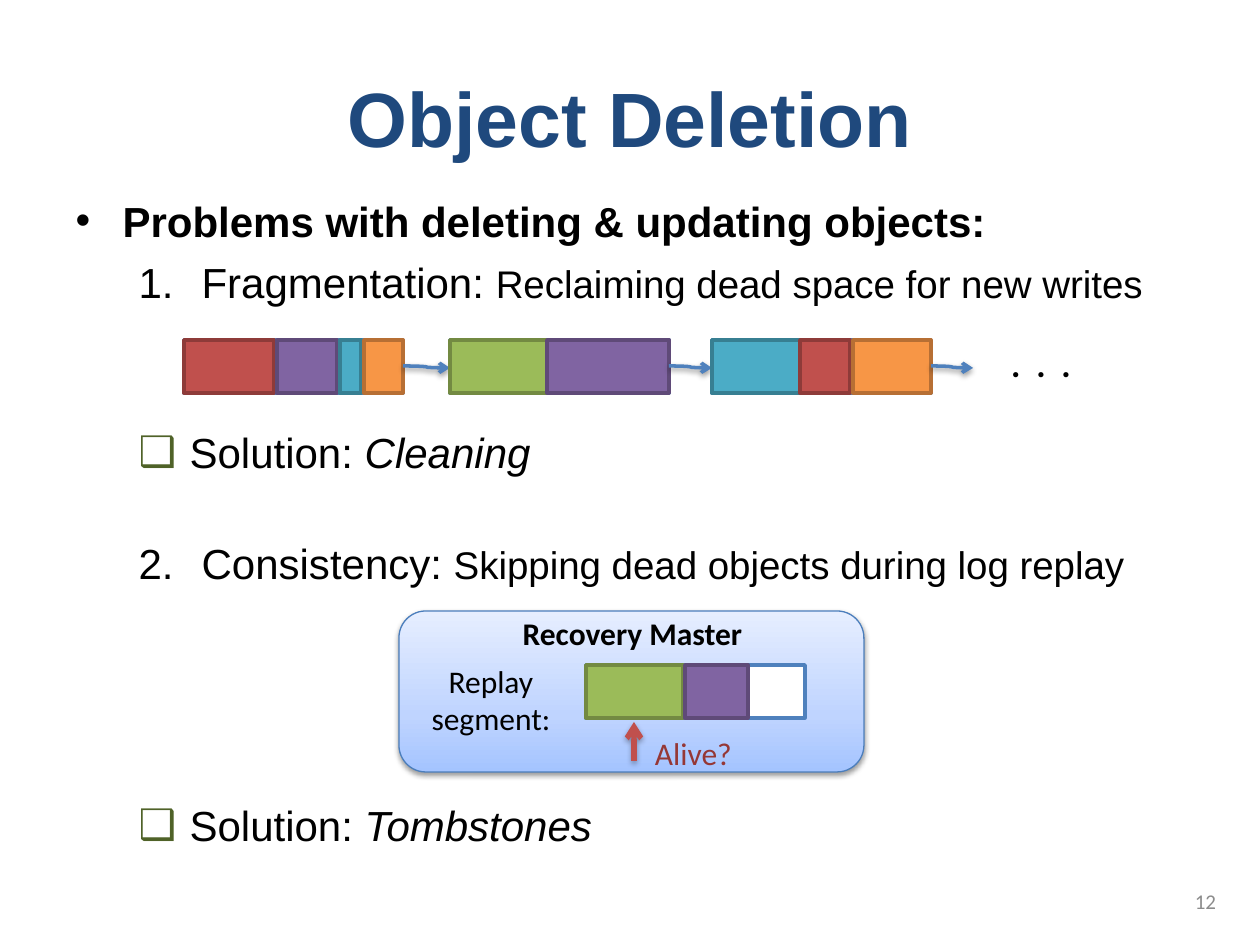
from dataclasses import dataclass

from lxml.etree import SubElement as Sub
from pptx import Presentation
from pptx.dml.color import RGBColor
from pptx.enum.shapes import MSO_CONNECTOR as Conn, MSO_SHAPE as Kind
from pptx.enum.text import MSO_ANCHOR as Anchor, MSO_AUTO_SIZE as Fit, PP_ALIGN as Align
from pptx.oxml.ns import qn
from pptx.util import Pt

SCALE = 914400 / 126
BLUE, RED, BLACK = "4F81BD", "C0504D", "000000"
EDGES = {"FFFFFF": BLUE, RED: "8E3B39", "8064A2": "5F4A78",
         "4BACC6": "377F92", "9BBB59": "738A42", "F79646": "B76F34"}


@dataclass
class Block:
    x: int
    w: int
    hue: str


@dataclass
class Item:
    head: str
    tail: str
    size: int
    slant: bool
    gap: float
    left: int
    hang: int
    start: int = 0


@dataclass
class Label:
    text: str
    x: int
    y: int
    w: int
    h: int
    size: int
    hue: str
    align: Align
    bold: bool = False
    wrap: bool = False
    inset: int = 6


LOG = [
    [Block(184, 90, RED), Block(277, 60, "8064A2"),
     Block(340, 21, "4BACC6"), Block(364, 39, "F79646")],
    [Block(450, 97, "9BBB59"), Block(547, 122, "8064A2")],
    [Block(712, 88, "4BACC6"), Block(800, 50, RED), Block(853, 78, "F79646")],
]
REPLAY = [Block(586, 97, "9BBB59"), Block(685, 63, "8064A2")]
ENDS = [450, 712, 973]
ITEMS = [
    Item("Fragmentation: ", "Reclaiming dead space for new writes", 22, False, 6, 126, 63, 1),
    Item("Solution: ", "Cleaning", 24, True, 68.4, 114, 51),
    Item("Consistency: ", "Skipping dead objects during log replay", 22, False, 34.7, 126, 63, 2),
    Item("Solution: ", "Tombstones", 24, True, 121, 114, 51),
]
LABELS = [
    Label("12", 935, 876, 293, 50, 12, "8C8C8C", Align.RIGHT, wrap=True),
    Label(".  .  .", 997, 336, 86, 55, 20, BLACK, Align.RIGHT, bold=True),
    Label("Recovery Master", 465, 614, 335, 38, 18, BLACK, Align.CENTER, True, True, 0),
    Label("Alive?", 643, 728, 103, 50, 18, "953735", Align.LEFT),
    Label("Replay\vsegment:", 418, 655, 146, 89, 18, BLACK, Align.CENTER),
]


def px(n: float) -> int:
    return round(n * SCALE)


def rgb(code: str) -> RGBColor:
    return RGBColor.from_string(code)


def style(para, face: str, size: int, hue: str, bold: bool = False) -> None:
    font = para.font
    font.name, font.size, font.bold = face, Pt(size), bold
    font.color.rgb = rgb(hue)


def place(shape, x: int, y: int, w: int, h: int) -> None:
    shape.left, shape.top, shape.width, shape.height = map(px, (x, y, w, h))


def tint(host, code: str):
    return Sub(host, qn("a:srgbClr"), val=code)


def shade(effect, alpha: int) -> None:
    cast = Sub(effect, qn("a:outerShdw"), blurRad="40000", dist="20000",
               dir="5400000", rotWithShape="0")
    Sub(tint(cast, BLACK), qn("a:alpha"), val=str(alpha * 1000))


def box(slide, kind: Kind, x: int, y: int, w: int, h: int, hue: str, edge: str, width: float):
    shape = slide.shapes.add_shape(kind, px(x), px(y), px(w), px(h))
    shape.shadow.inherit = False
    shape.fill.solid()
    shape.fill.fore_color.rgb = rgb(hue)
    shape.line.color.rgb = rgb(edge)
    shape.line.width = Pt(width)
    return shape


def strip(slide, frame: Block, blocks: list[Block], y: int) -> None:
    for part in [frame, *blocks]:
        box(slide, Kind.RECTANGLE, part.x, y, part.w, 53, part.hue, EDGES[part.hue], 2)


def arrow(slide, kind: Conn, x1: int, y1: int, x2: int, y2: int,
          hue: str, width: float, alpha: int) -> None:
    link = slide.shapes.add_connector(kind, px(x1), px(y1), px(x2), px(y2))
    link.line.color.rgb = rgb(hue)
    link.line.width = Pt(width)
    Sub(link.line._get_or_add_ln(), qn("a:tailEnd"), type="arrow")
    shade(Sub(link._element.spPr, qn("a:effectLst")), alpha)


def card(slide) -> None:
    shape = box(slide, Kind.ROUNDED_RECTANGLE, 399, 611, 465, 161, "BFD4FF", "4B7EBC", 0.75)
    props = shape._element.spPr
    shade(props.find(qn("a:effectLst")), 38)
    old = props.find(qn("a:solidFill"))
    grad = props.makeelement(qn("a:gradFill"), {"rotWithShape": "1"})
    props.replace(old, grad)
    stops = Sub(grad, qn("a:gsLst"))
    for pos, hue in ((0, "A4C4FF"), (35, "BFD4FF"), (100, "E6EEFF")):
        tint(Sub(stops, qn("a:gs"), pos=str(pos * 1000)), hue)
    Sub(grad, qn("a:lin"), ang="16200000", scaled="0")


def write(slide, label: Label) -> None:
    shape = slide.shapes.add_textbox(*map(px, (label.x, label.y, label.w, label.h)))
    frame = shape.text_frame
    frame.word_wrap = label.wrap
    frame.margin_top = frame.margin_bottom = px(label.inset)
    frame.margin_left = frame.margin_right = px(2 * label.inset)
    frame.vertical_anchor = Anchor.MIDDLE
    para = frame.paragraphs[0]
    para.text = label.text
    para.alignment = label.align
    style(para, "Calibri", label.size, label.hue, label.bold)


def indent(para, left: int, hang: int):
    props = para._p.get_or_add_pPr()
    props.set("marL", str(px(left)))
    props.set("indent", str(-px(hang)))
    return props


def listing(frame) -> None:
    frame.auto_size = Fit.NONE
    frame.word_wrap = True
    para = frame.paragraphs[0]
    para.text = "Problems with deleting & updating objects:"
    para.space_before = Pt(5)
    style(para, "Arial", 24, BLACK, True)
    Sub(indent(para, 47, 47), qn("a:buChar"), char="•")
    for item in ITEMS:
        para = frame.add_paragraph()
        para.level = 1
        para.space_before = Pt(item.gap)
        style(para, "Arial", 24, BLACK)
        para.add_run().text = item.head
        run = para.add_run()
        run.text = item.tail
        run.font.size = Pt(item.size)
        run.font.italic = item.slant
        props = indent(para, item.left, item.hang)
        marks = []
        if item.start:
            marks.append(props.makeelement(qn("a:buAutoNum"), {
                "type": "arabicPeriod", "startAt": str(item.start)}))
        else:
            hue = props.makeelement(qn("a:buClr"), {})
            tint(hue, "4F6228")
            marks += [hue, props.makeelement(qn("a:buChar"), {"char": "❑"})]
        spot = props.index(props.find(qn("a:defRPr")))
        props[spot:spot] = marks


def main() -> None:
    deck = Presentation()
    deck.slide_width, deck.slide_height = px(1260), px(945)
    slide = deck.slides.add_slide(deck.slide_layouts[1])
    title, body = slide.placeholders
    place(title, 63, 38, 1134, 158)
    title.text_frame.vertical_anchor = Anchor.MIDDLE
    head = title.text_frame.paragraphs[0]
    head.text = "Object Deletion"
    head.alignment = Align.CENTER
    style(head, "Arial", 44, "1F497D", True)
    place(body, 63, 189, 1134, 756)
    listing(body.text_frame)
    for blocks, end in zip(LOG, ENDS):
        first = blocks[0].x
        strip(slide, Block(first, 219, "FFFFFF"), blocks, 340)
        arrow(slide, Conn.CURVE, first + 219, 366, end, 368, BLUE, 2, 38)
    card(slide)
    strip(slide, Block(586, 219, "FFFFFF"), REPLAY, 665)
    arrow(slide, Conn.STRAIGHT, 634, 761, 634, 722, RED, 3, 35)
    for label in LABELS:
        write(slide, label)
    deck.save("out.pptx")


if __name__ == "__main__":
    main()
